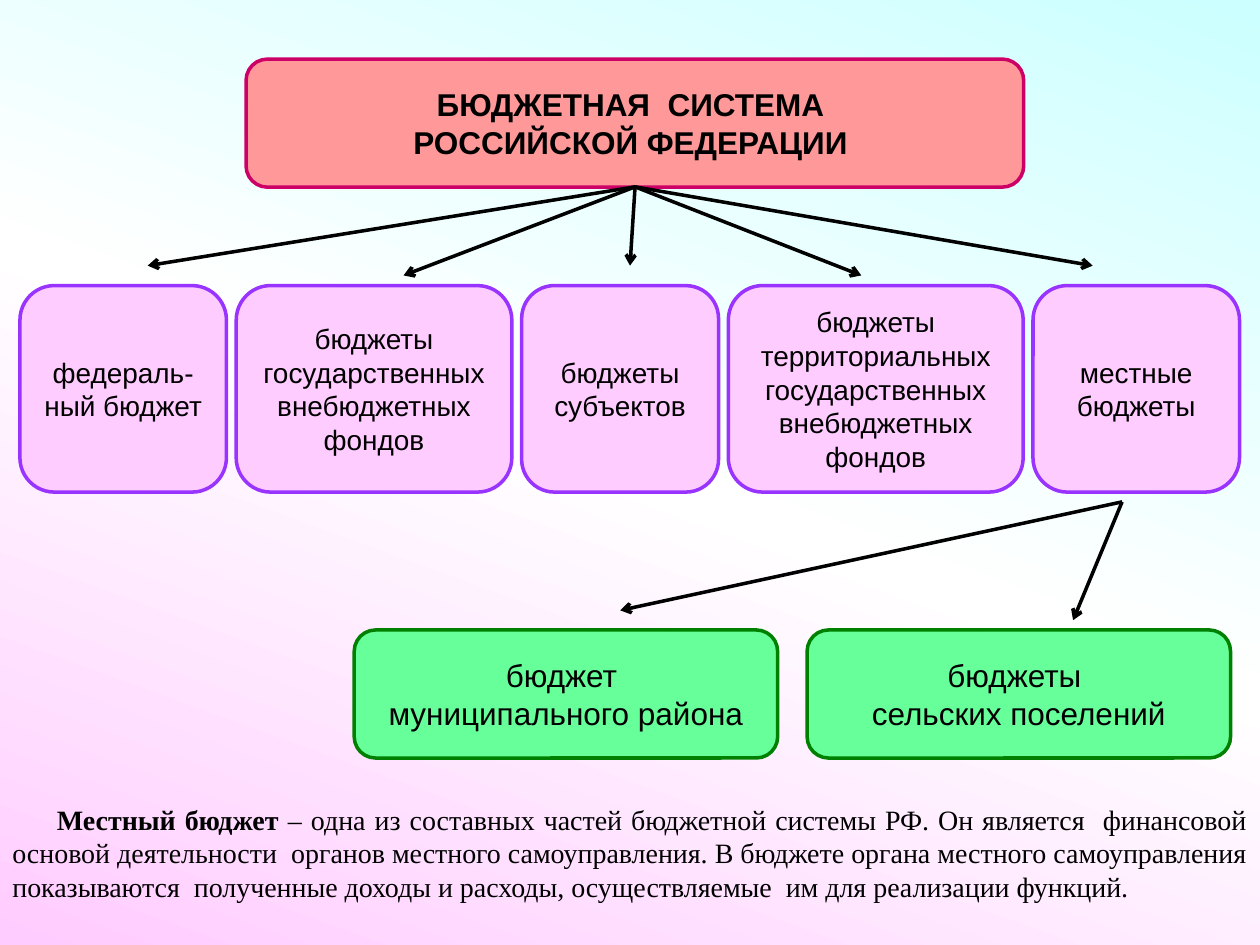
from copy import deepcopy
from typing import NamedTuple

from pptx import Presentation
from pptx import util as u
from pptx.dml.color import RGBColor
from pptx.enum import shapes, text
from pptx.oxml import ns, xmlchemy

BLACK = RGBColor(0x00, 0x00, 0x00)
WHITE = RGBColor(0xFF, 0xFF, 0xFF)
CYAN = RGBColor(0xCC, 0xFF, 0xFF)
PINK = RGBColor(0xFF, 0xCC, 0xFF)
SALMON = RGBColor(0xFF, 0x99, 0x99)
CRIMSON = RGBColor(0xCC, 0x00, 0x66)
VIOLET = RGBColor(0x99, 0x33, 0xFF)
MINT = RGBColor(0x66, 0xFF, 0x99)
GREEN = RGBColor(0x00, 0x80, 0x00)

Point = tuple[float, float]


class BoxStyle(NamedTuple):
    fill: RGBColor
    line: RGBColor
    font: dict


class Box(NamedTuple):
    left: float
    top: float
    width: float
    height: float
    lines: list[str]
    style: BoxStyle


class Arrow(NamedTuple):
    start: Point
    end: Point


def font_format(name: str, size: float, bold: bool = False) -> dict:
    return {"name": name, "size": u.Pt(size), "bold": bold}


TITLE = BoxStyle(SALMON, CRIMSON, font_format("Arial", 18, True))
LEVEL = BoxStyle(PINK, VIOLET, font_format("Arial", 16))
LOCAL = BoxStyle(MINT, GREEN, font_format("Arial", 18))


def apply_format(target, values: dict) -> None:
    for name, value in values.items():
        setattr(target, name, value)


def add_run(paragraph, words: str, font: dict) -> None:
    run = paragraph.add_run()
    run.text = words
    apply_format(run.font, font)
    run.font.color.rgb = BLACK


def paint_background(slide) -> None:
    fill = slide.background.fill
    fill.gradient()
    fill.gradient_angle = 250
    stop_list = slide.element.find(".//" + ns.qn("a:gsLst"))
    stop_list.append(deepcopy(stop_list[-1]))
    for stop, position, color in zip(
        fill.gradient_stops, (0, 0.5, 1), (CYAN, WHITE, PINK)
    ):
        stop.position = position
        stop.color.rgb = color


def add_box(slide, box: Box) -> None:
    shape = slide.shapes.add_shape(
        shapes.MSO_SHAPE.ROUNDED_RECTANGLE, *map(u.Pt, box[:4])
    )
    shape.shadow.inherit = False
    shape.fill.solid()
    shape.fill.fore_color.rgb = box.style.fill
    shape.line.color.rgb = box.style.line
    shape.line.width = u.Pt(2)
    frame = shape.text_frame
    apply_format(
        frame, {"word_wrap": True, "vertical_anchor": text.MSO_ANCHOR.MIDDLE}
    )
    for index, words in enumerate(box.lines):
        paragraph = frame.add_paragraph() if index else frame.paragraphs[0]
        paragraph.alignment = text.PP_ALIGN.CENTER
        add_run(paragraph, words, box.style.font)


def add_arrow(slide, arrow: Arrow) -> None:
    connector = slide.shapes.add_connector(
        shapes.MSO_CONNECTOR.STRAIGHT, *map(u.Pt, arrow.start + arrow.end)
    )
    connector.line.color.rgb = BLACK
    connector.line.width = u.Pt(2)
    line = connector.line._get_or_add_ln()
    line.append(xmlchemy.OxmlElement("a:tailEnd"))
    line[-1].set("type", "arrow")
    connector._element.spPr.append(xmlchemy.OxmlElement("a:effectLst"))


def add_definition(slide) -> None:
    text_box = slide.shapes.add_textbox(*map(u.Pt, (0, 455, 720, 85)))
    text_box.text_frame.word_wrap = True
    paragraph = text_box.text_frame.paragraphs[0]
    paragraph.alignment = text.PP_ALIGN.JUSTIFY
    properties = paragraph._p.get_or_add_pPr()
    properties.set("marL", "0")
    properties.set("indent", str(u.Pt(25.5)))
    add_run(paragraph, "Местный бюджет ", font_format("Times New Roman", 16, True))
    add_run(
        paragraph,
        "– одна из составных частей бюджетной системы РФ. Он является  "
        "финансовой основой деятельности  органов местного самоуправления. "
        "В бюджете органа местного самоуправления показываются  полученные "
        "доходы и расходы, осуществляемые  им для реализации функций.",
        font_format("Times New Roman", 16),
    )


def level_boxes() -> list[Box]:
    columns = [
        (118, ["федераль-", "ный бюджет"]),
        (157.5, ["бюджеты государственных внебюджетных фондов"]),
        (112.5, ["бюджеты субъектов"]),
        (168.5, ["бюджеты территориальных государственных внебюджетных фондов"]),
        (118, ["местные бюджеты"]),
    ]
    boxes, left, gap = [], 11.4, 5.6
    for width, lines in columns:
        boxes.append(Box(left, 163.2, width, 118, lines, LEVEL))
        left += width + gap
    return boxes


def main() -> None:
    presentation = Presentation()
    presentation.slide_width = u.Pt(720)
    presentation.slide_height = u.Pt(540)
    slide = presentation.slides.add_slide(presentation.slide_layouts[6])
    paint_background(slide)

    # Boxes: the system, its levels, the local budgets
    title_lines = ["БЮДЖЕТНАЯ  СИСТЕМА ", "РОССИЙСКОЙ ФЕДЕРАЦИИ "]
    add_box(slide, Box(140.6, 33.8, 444.4, 73.2, title_lines, TITLE))
    for box in level_boxes():
        add_box(slide, box)
    local_lines = [
        ["бюджет ", "муниципального района"],
        ["бюджеты ", "сельских поселений"],
    ]
    for index, lines in enumerate(local_lines):
        add_box(slide, Box(202.4 + 258.8 * index, 360, 242, 73.2, lines, LOCAL))

    # Arrows: fans from the system and from the local budgets
    system, local = (362.9, 106.8), (641.2, 286.8)
    system_ends = [(84.4, 151.8), (230.6, 157.4), (360, 151.8),
                   (492.2, 157.4), (624.4, 151.8)]
    local_ends = [(354.4, 348.8), (613.2, 354.4)]
    for start, ends in ((system, system_ends), (local, local_ends)):
        for end in ends:
            add_arrow(slide, Arrow(start, end))

    # Definition at the foot
    add_definition(slide)
    presentation.save("out.pptx")


if __name__ == "__main__":
    main()
